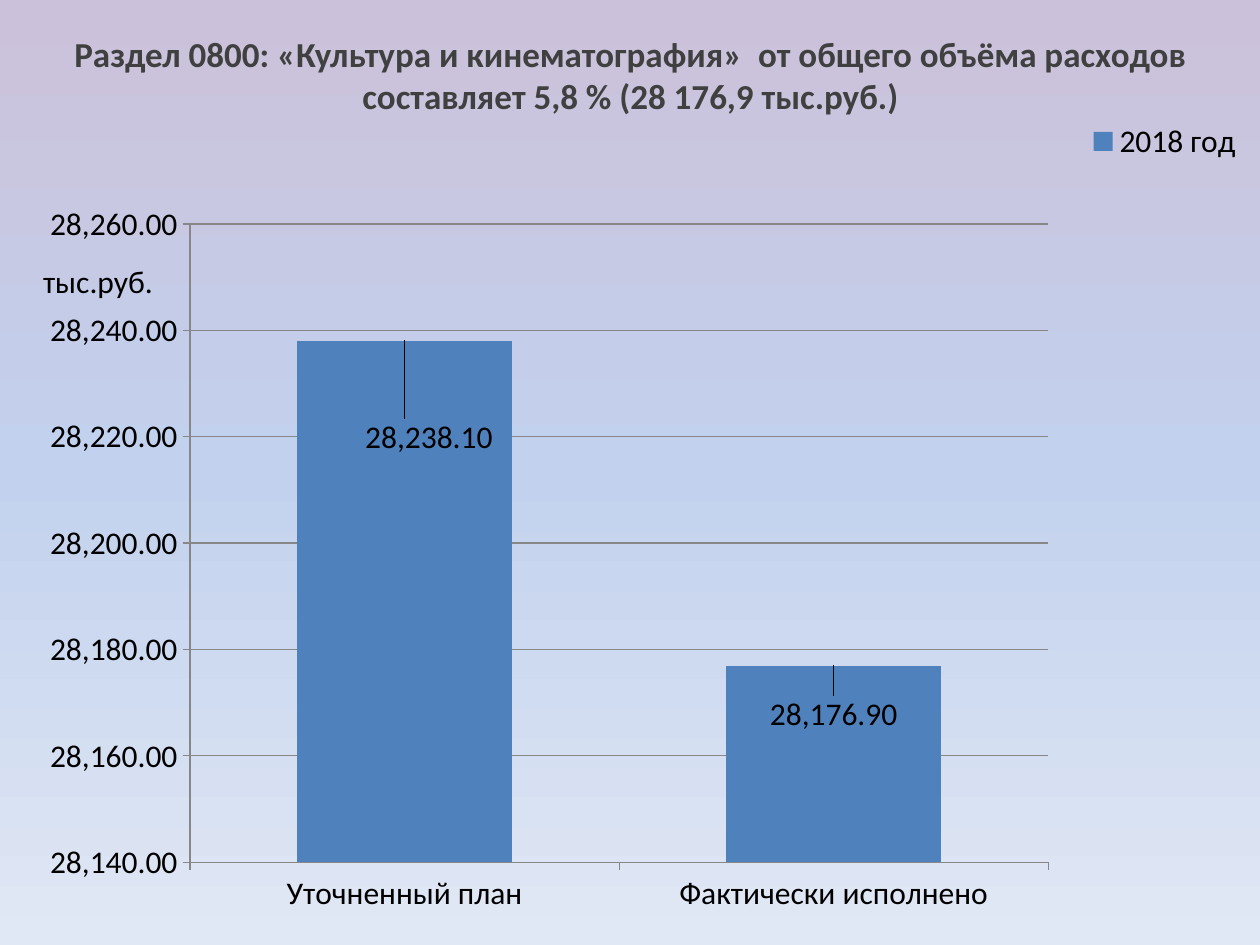
from copy import deepcopy
from dataclasses import dataclass

from lxml.etree import SubElement
from pptx import Presentation
from pptx.chart.data import CategoryChartData
from pptx.dml.color import RGBColor
from pptx.enum.chart import XL_CHART_TYPE as ChartType
from pptx.enum.chart import XL_LABEL_POSITION as LabelPosition
from pptx.enum.chart import XL_LEGEND_POSITION as LegendPosition
from pptx.enum.chart import XL_TICK_MARK as TickMark
from pptx.enum.text import MSO_ANCHOR as Anchor
from pptx.enum.text import MSO_AUTO_SIZE as AutoSize
from pptx.enum.text import PP_ALIGN as Align
from pptx.oxml.ns import qn
from pptx.util import Inches, Pt

FONT = "Calibri"
NUMBER_FORMAT = "#,##0.00"
GRID_COLOR = "878787"


@dataclass
class Indicator:
    name: str
    amount: float
    label_dx: float
    label_dy: float


@dataclass
class GradientStop:
    position: float
    color: str


INDICATORS = [
    Indicator("Уточненный план", 28238.1, 0.02, 0.09),
    Indicator("Фактически исполнено", 28176.9, 0, 0.03),
]
BACKGROUND = [
    GradientStop(0, "CCC1DA"),
    GradientStop(0.5, "C2D1ED"),
    GradientStop(1, "E1E8F5"),
]


def rgb(color: str) -> RGBColor:
    return RGBColor.from_string(color)


def format_font(font, size: float, color: str = "000000", bold: bool = False) -> None:
    font.name = FONT
    font.size = Pt(size)
    font.bold = bold
    font.color.rgb = rgb(color)


def write_text(frame, text: str, *, size: float, color: str = "000000",
               bold: bool = False, align=Align.CENTER, before: float = 0) -> None:
    paragraph = frame.paragraphs[0]
    paragraph.alignment = align
    paragraph.space_before = Pt(before)
    run = paragraph.add_run()
    run.text = text
    format_font(run.font, size, color, bold)


def set_layout(parent, index: int, **settings) -> None:
    for old_layout in parent.findall(qn("c:layout")):
        parent.remove(old_layout)
    layout = SubElement(parent, qn("c:layout"))
    manual = SubElement(layout, qn("c:manualLayout"))
    for tag, value in settings.items():
        SubElement(manual, qn(f"c:{tag}")).set("val", str(value))
    parent.insert(index, layout)


def paint_background(slide, stops: list[GradientStop]) -> None:
    fill = slide.background.fill
    fill.gradient()
    fill.gradient_angle = 270
    stop_list = next(slide.element.iter(qn("a:gsLst")))
    while len(stop_list) < len(stops):
        stop_list.append(deepcopy(stop_list[0]))
    for target, stop in zip(fill.gradient_stops, stops):
        target.color.rgb = rgb(stop.color)
        target.position = stop.position


def add_heading(slide, text: str) -> None:
    heading = slide.shapes.title
    heading.left, heading.top = Inches(0.28), Inches(0.21)
    heading.width, heading.height = Inches(9.45), Inches(0.55)
    frame = heading.text_frame
    frame.word_wrap = True
    frame.auto_size = AutoSize.NONE
    frame.vertical_anchor = Anchor.TOP
    write_text(frame, text, size=20, color="404040", bold=True, before=4)


def style_axis(axis) -> None:
    axis.major_tick_mark = TickMark.OUTSIDE
    axis.minor_tick_mark = TickMark.NONE
    style_line(axis.format.line)
    format_font(axis.tick_labels.font, 18)


def style_line(line) -> None:
    line.color.rgb = rgb(GRID_COLOR)
    line.width = Pt(0.75)


def add_spending_chart(slide, indicators: list[Indicator]) -> None:
    data = CategoryChartData(number_format=NUMBER_FORMAT)
    data.categories = [item.name for item in indicators]
    data.add_series("2018 год", [item.amount for item in indicators])
    chart = slide.shapes.add_chart(
        ChartType.COLUMN_CLUSTERED, Inches(0.2), Inches(0.92),
        Inches(9.69), Inches(6.46), data).chart
    format_font(chart.font, 18)

    chart.has_title = True
    write_text(chart.chart_title.text_frame, "тыс.руб.", size=18)
    set_layout(next(chart.element.iter(qn("c:title"))), 1,
               xMode="edge", yMode="edge", x=0.01, y=0.17)
    set_layout(next(chart.element.iter(qn("c:plotArea"))), 0,
               layoutTarget="inner", xMode="edge", yMode="edge",
               x=0.135, y=0.133, w=0.703, h=0.784)

    chart.has_legend = True
    chart.legend.position = LegendPosition.CORNER
    chart.legend.include_in_layout = False
    format_font(chart.legend.font, 18)

    style_axis(chart.category_axis)
    amounts = chart.value_axis
    style_axis(amounts)
    amounts.minimum_scale, amounts.maximum_scale = 28140, 28260
    amounts.major_unit = 20
    amounts.has_major_gridlines = True
    style_line(amounts.major_gridlines.format.line)
    amounts.tick_labels.number_format = NUMBER_FORMAT
    amounts.tick_labels.number_format_is_linked = False

    plot = chart.plots[0]
    plot.gap_width = 100
    plot.vary_by_categories = False
    spending = plot.series[0]
    spending.format.fill.solid()
    spending.format.fill.fore_color.rgb = rgb("4F81BD")
    labels = spending.data_labels
    labels.show_value = True
    labels.number_format = NUMBER_FORMAT
    labels.number_format_is_linked = False
    format_font(labels.font, 18)
    for index, item in enumerate(indicators):
        label = spending.points[index].data_label
        label.position = LabelPosition.INSIDE_END
        format_font(label.font, 18)
    for element, item in zip(chart.element.iter(qn("c:dLbl")), indicators):
        set_layout(element, 1, x=item.label_dx, y=item.label_dy)


def main() -> None:
    deck = Presentation()
    deck.slide_width, deck.slide_height = Inches(10), Inches(7.5)
    slide = deck.slides.add_slide(deck.slide_layouts[5])
    paint_background(slide, BACKGROUND)
    add_heading(slide, "Раздел 0800: «Культура и кинематография»  от общего объёма "
                       "расходов составляет 5,8 % (28 176,9 тыс.руб.)")
    add_spending_chart(slide, INDICATORS)
    deck.save("out.pptx")


if __name__ == "__main__":
    main()
